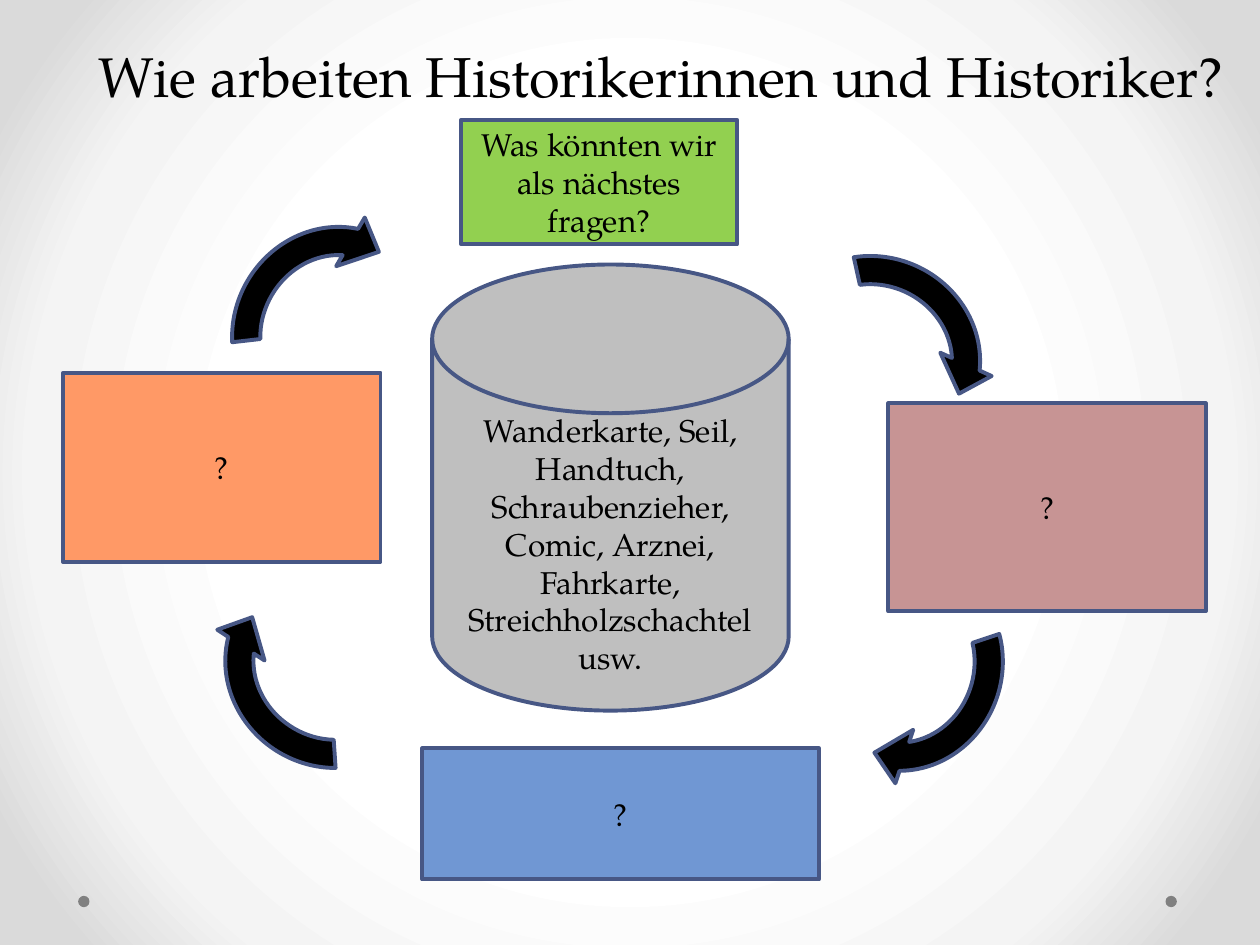
from pptx import Presentation
from pptx.dml.color import RGBColor
from pptx.enum.shapes import MSO_SHAPE
from pptx.enum.text import MSO_ANCHOR, PP_ALIGN
from pptx.oxml import parse_xml
from pptx.oxml.ns import qn
from pptx.util import Inches, Pt

FONT = "TeX Gyre Pagella"
BLACK, OUTLINE = "000000", "475785"

deck = Presentation()
deck.slide_width, deck.slide_height = Inches(10), Inches(7.5)
slide = deck.slides.add_slide(deck.slide_layouts[6])

# Grid of 100 columns by 75 rows
COL, ROW = deck.slide_width / 100, deck.slide_height / 75


def add_part(preset, left, top, width, height, fill, outline=OUTLINE):
    part = slide.shapes.add_shape(preset, round(left * COL), round(top * ROW),
                                  round(width * COL), round(height * ROW))
    part.shadow.inherit = False
    part.fill.solid()
    part.fill.fore_color.rgb = RGBColor.from_string(fill)
    if outline:
        part.line.color.rgb = RGBColor.from_string(outline)
        part.line.width = Pt(2.25)
    else:
        part.line.fill.background()
    return part


def write(part, lines, size=18, anchor=MSO_ANCHOR.MIDDLE):
    frame = part.text_frame
    frame.word_wrap = True
    frame.vertical_anchor = anchor
    frame.text = "\n".join(lines)
    for paragraph in frame.paragraphs:
        paragraph.alignment = PP_ALIGN.CENTER
        paragraph.font.name = FONT
        paragraph.font.size = Pt(size)
        paragraph.font.color.rgb = RGBColor.from_string(BLACK)
    return frame


# Background: white centre fading to grey corners
slide.background.fill.solid()
glow_stops = "".join(
    f'<a:gs pos="{share * 1000}"><a:srgbClr val="{color}"/></a:gs>'
    for share, color in [(50, "FFFFFF"), (76, "F4F4F4"), (92, "DADADA")])
glow = parse_xml(
    '<a:gradFill xmlns:a="http://schemas.openxmlformats.org/drawingml/2006/main" rotWithShape="1">'
    f'<a:gsLst>{glow_stops}</a:gsLst><a:path path="circle">'
    '<a:fillToRect l="50000" t="50000" r="50000" b="50000"/></a:path></a:gradFill>')
plain_fill = next(slide.element.iter(qn("a:solidFill")))
plain_fill.getparent().replace(plain_fill, glow)

# Corner dots
for dot_left in (6.2, 92.5):
    add_part(MSO_SHAPE.OVAL, dot_left, 71.1, 0.9, 0.9, "808080", outline=None)

# Steps of the cycle, clockwise from the top
steps = [
    ("Was könnten wir als nächstes fragen?", 36.6, 9.5, 21.9, 9.9, "92D050"),
    ("?", 70.5, 32, 25.2, 16.5, "C79494"),
    ("?", 33.5, 59.4, 31.5, 10.4, "7097D3"),
    ("?", 5, 29.6, 25.2, 15, "FF9966"),
]
for question, left, top, width, height, color in steps:
    write(add_part(MSO_SHAPE.RECTANGLE, left, top, width, height, color), [question])

# Arrows between the steps, clockwise from the top right
for left, top, turn in [(60, 19.3, 24.4), (62.2, 43.9, 108.5),
                        (16.6, 44, 213.1), (16.9, 17.3, 300.4)]:
    arrow = add_part(MSO_SHAPE.CIRCULAR_ARROW, left, top, 19, 17.9, BLACK)
    arrow.rotation = turn
    for index, value in enumerate((0.125, 11.423, 204.577, 139.845, 0.125)):
        arrow.adjustments[index] = value

# Store of finds in the middle, its text set one line lower
finds = add_part(MSO_SHAPE.FLOWCHART_MAGNETIC_DISK, 34.3, 21, 28.3, 35.4, "BFBFBF")
finds_text = write(finds, [
    "Wanderkarte, Seil, Handtuch, Schraubenzieher, Comic, Arznei, "
    "Fahrkarte, Streichholzschachtel", "usw."])
finds_text.margin_top = round(3.5 * ROW)

# Title
title = slide.shapes.add_textbox(round(5 * COL), round(3 * ROW),
                                 round(95 * COL), round(6.1 * ROW))
title_text = write(title, ["Wie arbeiten Historikerinnen und Historiker?"],
                   size=32, anchor=MSO_ANCHOR.BOTTOM)
title_text.paragraphs[0].line_spacing = Pt(58)

deck.save("out.pptx")
